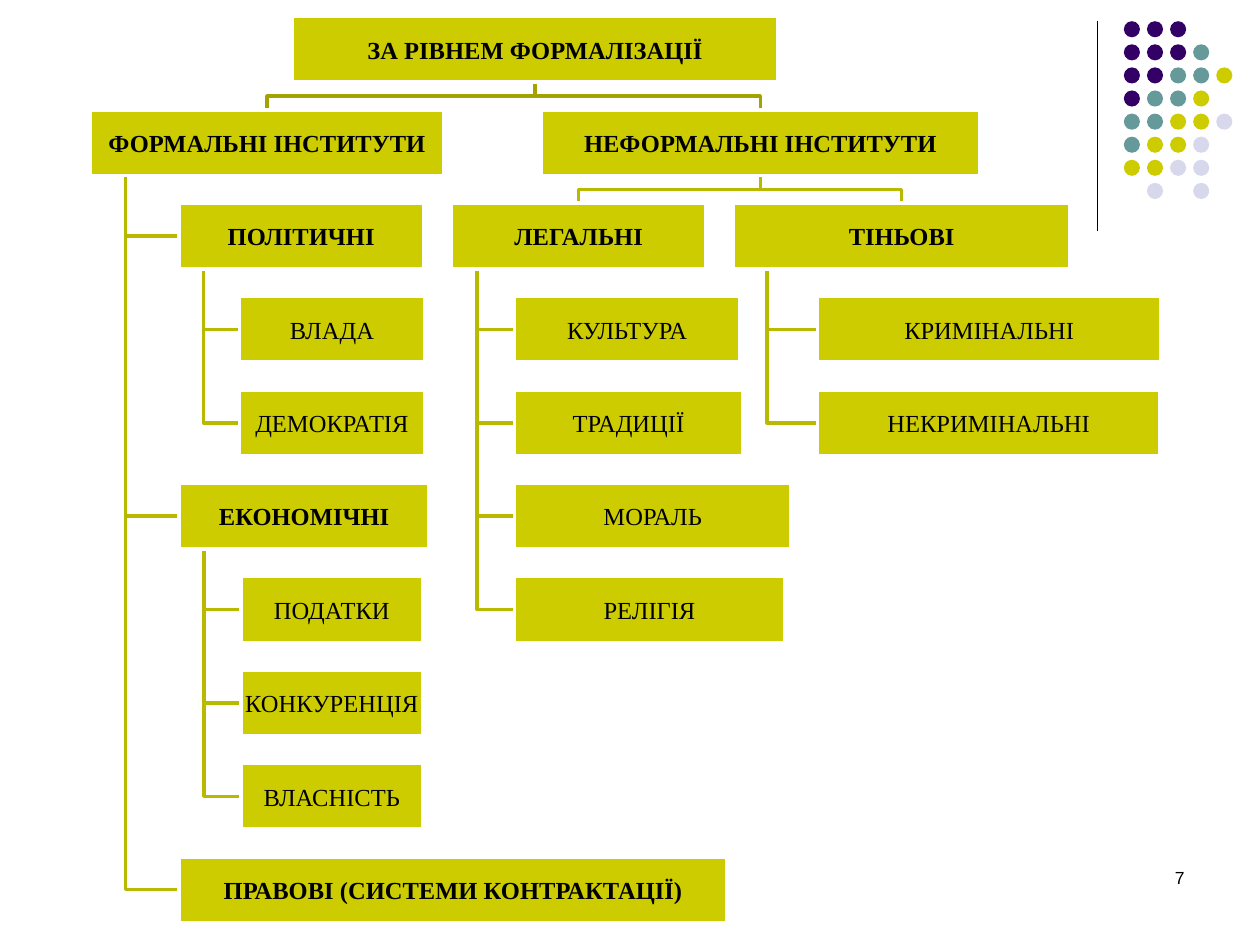
import pptx
import pptx.dml.color
import pptx.enum.shapes
import pptx.enum.text
import pptx.util
from dataclasses import dataclass
from lxml import etree

Pt = pptx.util.Pt
RGB = pptx.dml.color.RGBColor
Kind = pptx.enum.shapes.MSO_SHAPE
Align = pptx.enum.text.PP_ALIGN
Anchor = pptx.enum.text.MSO_ANCHOR

BLACK = RGB(0x00, 0x00, 0x00)
WHITE = RGB(0xFF, 0xFF, 0xFF)
OLIVE = RGB(0xCC, 0xCC, 0x00)
DARK = RGB(0xA3, 0xA3, 0x00)
MID = RGB(0xB9, 0xB9, 0x00)
PURPLE = RGB(0x33, 0x00, 0x66)
TEAL = RGB(0x66, 0x99, 0x99)
PALE = RGB(0xD8, 0xD8, 0xEC)

# Row grid of the tree, in points
TOP, PITCH, HIGH = 9.4, 53.36, 37.5
DROP = (PITCH - HIGH) / 2


@dataclass
class Node:
    text: str
    row: int
    left: float
    width: float
    kids: tuple = ()
    bold: bool = False
    hang: bool = True  # children hang from a stem at the left

    @property
    def top(self) -> float:
        return TOP + self.row * PITCH

    @property
    def base(self) -> float:
        return self.top + HIGH

    @property
    def mid(self) -> float:
        return self.left + self.width / 2


def leaves(row: int, left: float, *items: tuple) -> tuple:
    """Plain boxes, one per row, from (text, width) pairs."""
    return tuple(Node(text, row + i, left, width)
                 for i, (text, width) in enumerate(items))


POWER = Node("ПОЛІТИЧНІ", 2, 102.3, 139.7, leaves(
    3, 136.9, ("ВЛАДА", 105.6), ("ДЕМОКРАТІЯ", 105.6)), True)
TRADE = Node("ЕКОНОМІЧНІ", 5, 102.3, 143, leaves(
    6, 137.8, ("ПОДАТКИ", 103.7), ("КОНКУРЕНЦІЯ", 103.7),
    ("ВЛАСНІСТЬ", 103.7)), True)
LAW = Node("ПРАВОВІ (СИСТЕМИ КОНТРАКТАЦІЇ)", 9, 102.3, 313.2, bold=True)
LEGAL = Node("ЛЕГАЛЬНІ", 2, 258, 145.4, leaves(
    3, 293.9, ("КУЛЬТУРА", 128.9), ("ТРАДИЦІЇ", 130.5),
    ("МОРАЛЬ", 158.2), ("РЕЛІГІЯ", 154.6)), True)
SHADE = Node("ТІНЬОВІ", 2, 419.2, 192.2, leaves(
    3, 467.1, ("КРИМІНАЛЬНІ", 196.4), ("НЕКРИМІНАЛЬНІ", 195.8)), True)
FORMAL = Node("ФОРМАЛЬНІ ІНСТИТУТИ", 1, 51.4, 202.3,
              (POWER, TRADE, LAW), True)
LOOSE = Node("НЕФОРМАЛЬНІ ІНСТИТУТИ", 1, 309.2, 250.6,
             (LEGAL, SHADE), True, False)
ROOT = Node("ЗА РІВНЕМ ФОРМАЛІЗАЦІЇ", 0, 167.2, 277.2,
            (FORMAL, LOOSE), True, False)

# Dot ornament: one letter per dot
HUES = {"p": PURPLE, "t": TEAL, "o": OLIVE, "l": PALE}
DOTS = ("ppp", "pppt", "pptto", "ptto", "ttool", "tool", "ooll", " l l")


def style(item, **values) -> None:
    for name, value in values.items():
        setattr(item, name, value)


def write(frame, text: str, align, inset: tuple, anchor, **font) -> None:
    sides = ("margin_left", "margin_top", "margin_right", "margin_bottom")
    style(frame, vertical_anchor=anchor, **dict(zip(sides, map(Pt, inset))))
    para = frame.paragraphs[0]
    para.alignment = align
    run = para.add_run()
    run.text = text
    style(run.font, **font)
    run.font.color.rgb = BLACK


def solid(slide, kind, box: tuple, fill: RGB):
    shape = slide.shapes.add_shape(kind, *map(Pt, box))
    shape.shadow.inherit = False
    shape.fill.solid()
    shape.fill.fore_color.rgb = fill
    return shape


def stroke(line, color: RGB, width: float) -> None:
    line.color.rgb = color
    line.width = Pt(width)


def branch(slide, node: Node, kid: Node) -> None:
    if node.hang:
        stem, turn = node.left + node.width / 10, kid.top + HIGH / 2
        pts = [(stem, node.base), (stem, turn), (kid.left, turn)]
    else:
        turn = node.base + DROP
        pts = [(node.mid, node.base), (node.mid, turn),
               (kid.mid, turn), (kid.mid, kid.top)]
    pts = [(Pt(x), Pt(y)) for x, y in pts]
    pen = slide.shapes.build_freeform(*pts[0], scale=1.0)
    pen.add_line_segments(pts[1:], close=False)
    shape = pen.convert_to_shape()
    shape.shadow.inherit = False
    shape.fill.background()
    stroke(shape.line, DARK if node is ROOT else MID, 2)


def links(slide, node: Node) -> None:
    for kid in reversed(node.kids):
        links(slide, kid)
        branch(slide, node, kid)


def boxes(slide, node: Node) -> None:
    shape = solid(slide, Kind.RECTANGLE,
                  (node.left, node.top, node.width, HIGH), OLIVE)
    stroke(shape.line, WHITE, 2)
    shape.text_frame.word_wrap = True
    write(shape.text_frame, node.text, Align.CENTER, (0.7,) * 4,
          Anchor.MIDDLE, name="Times New Roman", size=Pt(14), bold=node.bold)
    for kid in node.kids:
        boxes(slide, kid)


def trim(slide) -> None:
    """Rule and dots in the top right corner."""
    rule = slide.shapes.add_connector(
        pptx.enum.shapes.MSO_CONNECTOR.STRAIGHT,
        *map(Pt, (627, 12, 627, 132)))
    stroke(rule.line, BLACK, 0.75)
    space = "{http://schemas.openxmlformats.org/drawingml/2006/main}"
    etree.SubElement(rule._element.spPr, space + "effectLst")
    for row, marks in enumerate(DOTS):
        for col, mark in enumerate(marks):
            if mark in HUES:
                dot = solid(slide, Kind.OVAL, (642.2 + col * 13.2,
                            12.1 + row * 13.2, 9.2, 9.2), HUES[mark])
                dot.line.fill.background()


def main() -> None:
    deck = pptx.Presentation()
    style(deck, slide_width=Pt(720), slide_height=Pt(540))
    slide = deck.slides.add_slide(deck.slide_layouts[6])
    trim(slide)

    # Page number
    page = slide.shapes.add_textbox(*map(Pt, (516, 492, 168, 36)))
    page.text_frame.word_wrap = True
    write(page.text_frame, "7", Align.RIGHT, (7.2, 3.6, 7.2, 3.6),
          Anchor.TOP, name="Arial", size=Pt(10))

    # Tree: links behind boxes
    links(slide, ROOT)
    boxes(slide, ROOT)
    deck.save("out.pptx")


if __name__ == "__main__":
    main()
